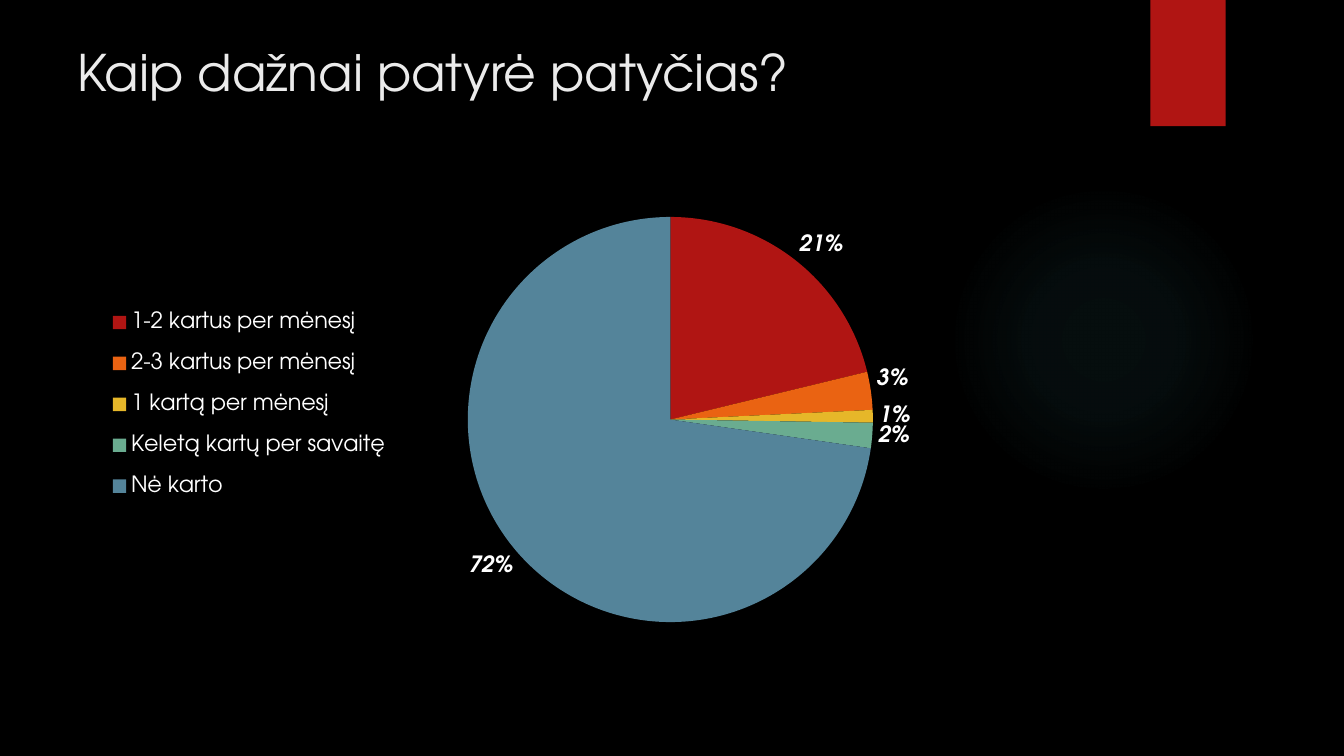
from lxml import etree
from pptx import Presentation
from pptx.chart.data import CategoryChartData
from pptx.dml.color import RGBColor
from pptx.enum.chart import XL_CHART_TYPE, XL_LABEL_POSITION, XL_LEGEND_POSITION
from pptx.enum.shapes import MSO_SHAPE
from pptx.enum.text import MSO_ANCHOR
from pptx.oxml import parse_xml
from pptx.oxml.ns import nsdecls, qn
from pptx.util import Cm, Pt

FONT = "TeX Gyre Adventor"
ANSWERS = [
    ("1-2 kartus per mėnesį", 21, "B01513"),
    ("2-3 kartus per mėnesį", 3, "EA6312"),
    ("1 kartą per mėnesį", 1, "E6B729"),
    ("Keletą kartų per savaitę", 2, "6AAC90"),
    ("Nė karto", 72, "54849A"),
]


def paint(fill, color):
    fill.solid()
    fill.fore_color.rgb = RGBColor.from_string(color)


def manual_layout(x, y, w, h, inner=False):
    """Chart layout element, in fractions of the chart frame."""
    layout = etree.Element(qn("c:layout"))
    manual = etree.SubElement(layout, qn("c:manualLayout"))
    settings = [("layoutTarget", "inner")] if inner else []
    settings += [("xMode", "edge"), ("yMode", "edge"), ("x", x), ("y", y), ("w", w), ("h", h)]
    for tag, value in settings:
        etree.SubElement(manual, qn(f"c:{tag}")).set("val", str(value))
    return layout


prs = Presentation()
prs.slide_width, prs.slide_height = Cm(33.87), Cm(19.05)
slide = prs.slides.add_slide(prs.slide_layouts[6])
paint(slide.background.fill, "000000")

# Background glow and red tab
glow = slide.shapes.add_shape(MSO_SHAPE.OVAL, Cm(23.9), Cm(4.65), Cm(7.82), Cm(7.82))
glow.shadow.inherit = False
glow.line.fill.background()
glow.fill.background()
stops = "".join(
    f'<a:gs pos="{pos * 1000}"><a:srgbClr val="50B9C1"><a:alpha val="{alpha * 1000}"/></a:srgbClr></a:gs>'
    for pos, alpha in [(0, 7), (36, 6), (69, 0), (100, 0)]
)
no_fill = glow.fill._xPr.find(qn("a:noFill"))
no_fill.getparent().replace(no_fill, parse_xml(
    f'<a:gradFill {nsdecls("a")}><a:gsLst>{stops}</a:gsLst><a:path path="circle">'
    '<a:fillToRect l="50000" t="50000" r="50000" b="50000"/></a:path></a:gradFill>'
))

tab = slide.shapes.add_shape(MSO_SHAPE.RECTANGLE, Cm(28.99), 0, Cm(1.9), Cm(3.18))
tab.shadow.inherit = False
tab.line.fill.background()
paint(tab.fill, "B01513")

# Title
title = slide.shapes.add_textbox(Cm(1.7), Cm(0.91), Cm(27.08), Cm(3.89)).text_frame
title.word_wrap = True
title.vertical_anchor = MSO_ANCHOR.TOP
question = title.paragraphs[0].add_run()
question.text = "Kaip dažnai patyrė patyčias?"
question.font.name = FONT
question.font.size = Pt(36)
question.font.color.rgb = RGBColor.from_string("EBEBEB")

# Pie of answers
answers = CategoryChartData()
answers.categories = [name for name, _, _ in ANSWERS]
answers.add_series("Series 1", [share for _, share, _ in ANSWERS])
pie = slide.shapes.add_chart(
    XL_CHART_TYPE.PIE, Cm(1.7), Cm(4.47), Cm(30.48), Cm(12.57), answers
).chart
pie.has_title = False
pie.font.name = FONT
pie.font.size = Pt(18)
pie.font.color.rgb = RGBColor.from_string("FFFFFF")

plot = pie.plots[0]
plot.vary_by_categories = True
for index, (_, _, color) in enumerate(ANSWERS):
    wedge = plot.series[0].points[index].format
    paint(wedge.fill, color)
    wedge.line.fill.background()

labels = plot.series[0].data_labels
labels.show_value = True
labels.number_format = '0"%"'
labels.number_format_is_linked = False
labels.position = XL_LABEL_POSITION.OUTSIDE_END
labels.font.name = FONT
labels.font.size = Pt(16)
labels.font.bold = True
labels.font.italic = True
labels.font.color.rgb = RGBColor.from_string("FFFFFF")

pie.has_legend = True
legend = pie.legend
legend.position = XL_LEGEND_POSITION.RIGHT
legend.include_in_layout = False
legend.font.name = FONT
legend.font.size = Pt(16)
legend.font.bold = False
legend.font.color.rgb = RGBColor.from_string("FFFFFF")

plot_area = pie._chartSpace.chart.plotArea
for old_layout in plot_area.findall(qn("c:layout")):
    plot_area.remove(old_layout)
plot_area.insert(0, manual_layout(0.331, 0.079, 0.335, 0.813, inner=True))
legend_xml = pie._chartSpace.chart.find(qn("c:legend"))
for old_layout in legend_xml.findall(qn("c:layout")):
    legend_xml.remove(old_layout)
legend_xml.find(qn("c:legendPos")).addnext(manual_layout(0.03, 0.23, 0.24, 0.45))

prs.save("out.pptx")
